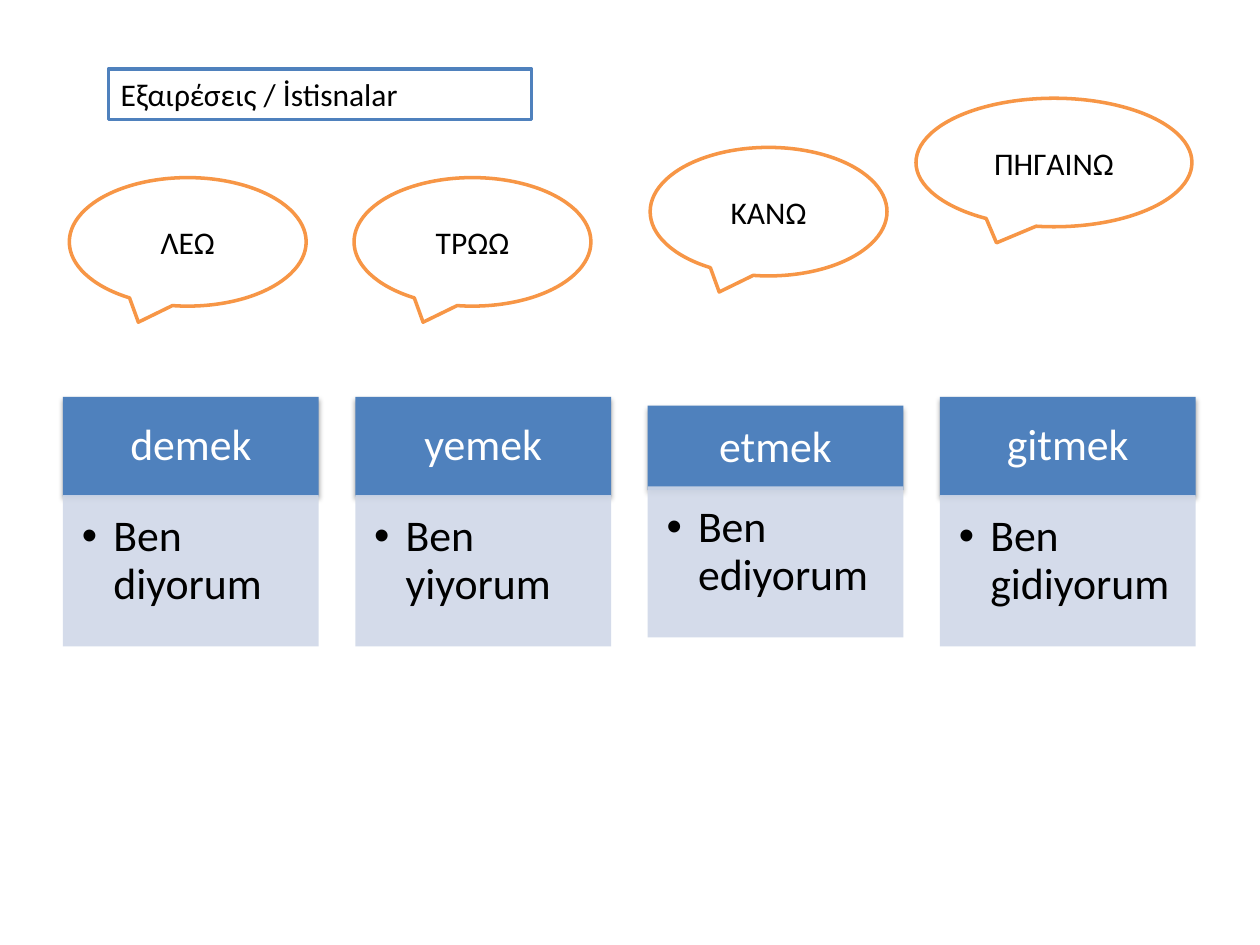
from lxml import etree
from pptx import Presentation
from pptx.dml.color import RGBColor
from pptx.enum.shapes import MSO_SHAPE
from pptx.enum.text import MSO_ANCHOR, PP_ALIGN
from pptx.oxml.ns import qn
from pptx.util import Inches, Pt

RECT = MSO_SHAPE.RECTANGLE
CALLOUT = MSO_SHAPE.OVAL_CALLOUT
TOP, MIDDLE = MSO_ANCHOR.TOP, MSO_ANCHOR.MIDDLE
LEFT, CENTER = PP_ALIGN.LEFT, PP_ALIGN.CENTER

COLORS = {
    "blue": "4F81BD",
    "pale": "D0D8E8",
    "orange": "F79646",
    "white": "FFFFFF",
    "black": "000000",
}
FONT = "Calibri"
CARD_LEFT, CARD_STEP, CARD_WIDTH, BODY_HEIGHT = 0.5, 2.32, 2.03, 1.2
DEFAULT_INSETS = (0.1, 0.05, 0.1, 0.05)

VERBS = [
    ("demek", "Ben diyorum", 3.15, 0.79, 3.93),
    ("yemek", "Ben yiyorum", 3.15, 0.79, 3.93),
    ("etmek", "Ben ediyorum", 3.22, 0.67, 3.86),
    ("gitmek", "Ben gidiyorum", 3.15, 0.79, 3.93),
]
CALLOUTS = [
    ("ΛΕΩ", 0.55, 1.41, 1.88),
    ("ΤΡΩΩ", 2.81, 1.41, 1.88),
    ("ΚΑΝΩ", 5.16, 1.17, 1.88),
    ("ΠΗΓΑΙΝΩ", 7.27, 0.78, 2.19),
]


def rgb(name):
    return RGBColor.from_string(COLORS[name])


class SlideBuilder:
    def __init__(self, slide):
        self.slide = slide

    def box(self, kind, at, fill, text, size=18, color="black", line=None,
            align=CENTER, anchor=MIDDLE, insets=DEFAULT_INSETS):
        sp = self.slide.shapes.add_shape(kind, *map(Inches, at))
        sp.shadow.inherit = False
        sp.fill.solid()
        sp.fill.fore_color.rgb = rgb(fill)
        if line:
            sp.line.color.rgb = rgb(line)
            sp.line.width = Pt(2)
        else:
            sp.line.fill.background()
        tf = sp.text_frame
        tf.word_wrap = True
        tf.vertical_anchor = anchor
        tf.margin_left, tf.margin_top, tf.margin_right, tf.margin_bottom = map(Inches, insets)
        tf.text = text
        p = tf.paragraphs[0]
        p.alignment = align
        r = p.runs[0]
        r.font.name = FONT
        r.font.size = Pt(size)
        r.font.color.rgb = rgb(color)
        return sp

    def header(self, at, text):
        sp = self.box(RECT, at, "blue", text, 25, "white", insets=(0.19, 0.11, 0.19, 0.11))
        sp.text_frame.paragraphs[0].line_spacing = 0.9
        effects = sp._element.spPr.find(qn("a:effectLst"))
        shadow = etree.SubElement(effects, qn("a:outerShdw"), blurRad=str(Pt(3.1)),
                                  dist=str(Pt(1.8)), dir="5400000", rotWithShape="0")
        black = etree.SubElement(shadow, qn("a:srgbClr"), val=COLORS["black"])
        etree.SubElement(black, qn("a:alpha"), val="35000")

    def body(self, at, text):
        sp = self.box(RECT, at, "pale", text, 25, align=LEFT, anchor=TOP,
                      insets=(0.15, 0.15, 0.19, 0.22))
        fill = sp._element.spPr.find(qn("a:solidFill"))
        etree.SubElement(fill[0], qn("a:alpha"), val="90000")
        p = sp.text_frame.paragraphs[0]
        p.level = 1
        p.line_spacing = 0.9
        pPr = p._p.get_or_add_pPr()
        pPr.set("marL", str(Inches(0.25)))
        pPr.set("indent", str(Inches(-0.25)))
        etree.SubElement(pPr, qn("a:buFont"), typeface="Arial")
        etree.SubElement(pPr, qn("a:buChar"), char="•")

    def callout(self, at, text):
        self.box(CALLOUT, at, "white", text, line="orange")

    def title(self, at, text):
        self.box(RECT, at, "white", text, line="blue", align=LEFT, anchor=TOP)


def main():
    prs = Presentation()
    prs.slide_width, prs.slide_height = Inches(10), Inches(7.5)
    s = SlideBuilder(prs.slides.add_slide(prs.slide_layouts[6]))
    for i, (verb, example, top, height, body_top) in enumerate(VERBS):
        left = CARD_LEFT + i * CARD_STEP
        s.header((left, top, CARD_WIDTH, height), verb)
        s.body((left, body_top, CARD_WIDTH, BODY_HEIGHT), example)
    for text, left, top, width in CALLOUTS:
        s.callout((left, top, width, 1.02), text)
    s.title((0.86, 0.55, 3.36, 0.4), "Εξαιρέσεις / İstisnalar")
    prs.save("out.pptx")


if __name__ == "__main__":
    main()
